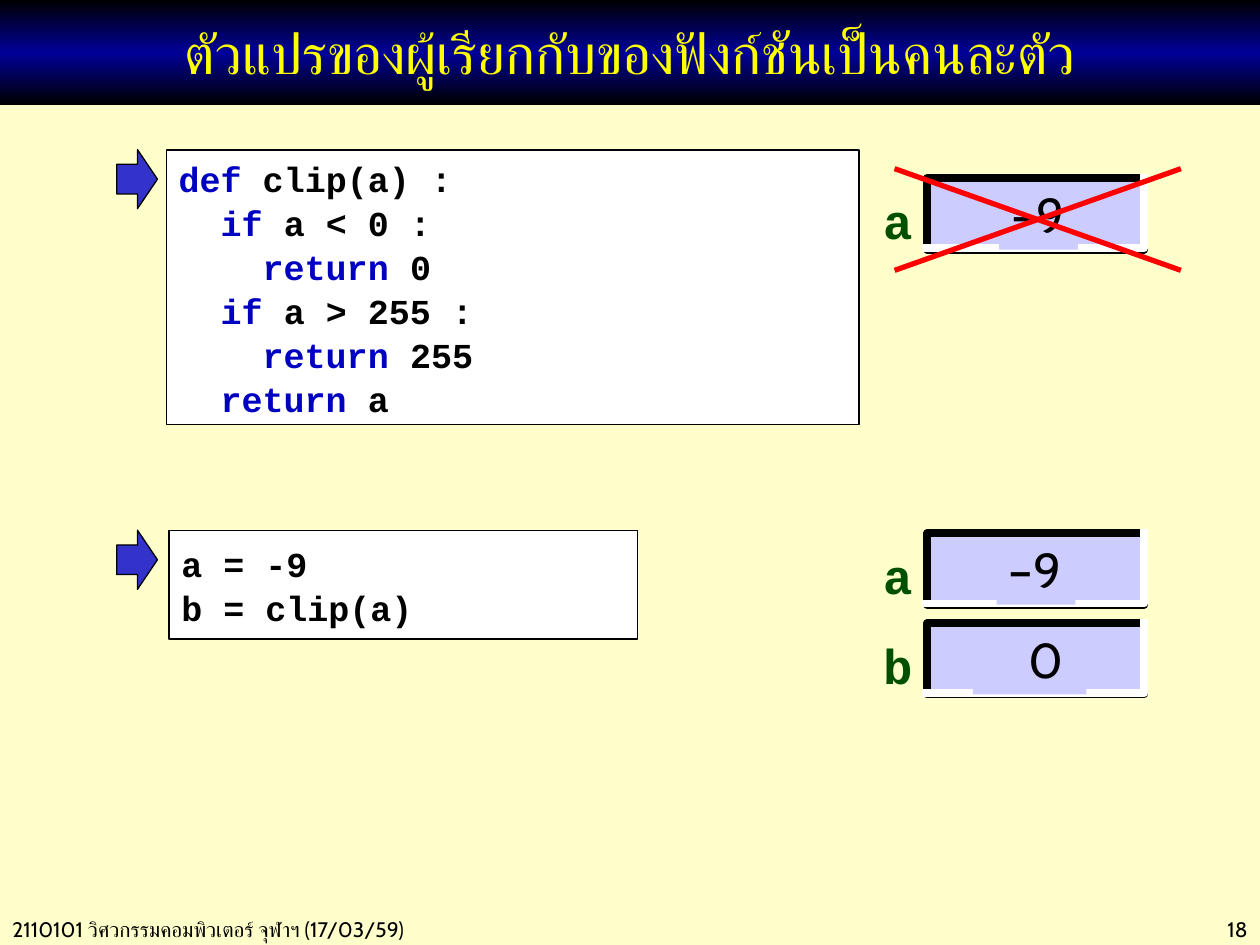
from lxml import etree
from pptx import Presentation
from pptx.dml.color import RGBColor
from pptx.enum import shapes, text
from pptx.oxml.ns import qn
from pptx.util import Pt

TITLE = "ตัวแปรของผู้เรียกกับของฟังก์ชันเป็นคนละตัว"
FOOTER = "2110101 วิศวกรรมคอมพิวเตอร์ จุฬาฯ (17/03/59)"
PAGE_NUMBER = "18"
KEYWORDS = {"def", "if", "return"}
# lines, (left, top, width, height)
CODE_BOXES = [
    (["a = -9", "b = clip(a)"], (96.5, 303.1, 267.8, 62)),
    (["def clip(a) :", "  if a < 0 :", "    return 0", "  if a > 255 :",
      "    return 255", "  return a"], (95, 85.7, 396, 157)),
]
# name, top of the cell, value, (left, width) of the value, its left inset
VARIABLES = [
    ("a", 304.6, "–9", (569.5, 45), 7.2),
    ("b", 355.9, "0", (556, 64.8), 31.5),
    ("a", 101.7, "–9", (571, 45), 7.2),
]
ARROW_TOPS = [303, 85.5]
CROSS = (511.2, 96.4, 674.8, 154.5)  # left, top, right, bottom
CELL_LEFT, CELL_WIDTH, CELL_HEIGHT = 530, 124, 41
BLACK, WHITE, CELL_FILL = "000000", "FFFFFF", "CCCCFF"


def color(value):
    return RGBColor.from_string(value)


def style(shape, fill=None, line=None, width=0.75):
    shape.shadow.inherit = False
    if fill:
        shape.fill.solid()
        shape.fill.fore_color.rgb = color(fill)
    else:
        shape.fill.background()
    if line:
        shape.line.color.rgb = color(line)
        shape.line.width = Pt(width)
    else:
        shape.line.fill.background()


def add_box(slide, box, fill=None, line=None, width=0.75,
            kind=shapes.MSO_SHAPE.RECTANGLE):
    shape = slide.shapes.add_shape(kind, *map(Pt, box))
    style(shape, fill, line, width)
    return shape


def set_font(run, size, name, value, bold=False):
    run.font.size = Pt(size)
    run.font.name = name
    run.font.bold = bold
    run.font.color.rgb = color(value)
    if name == "Cabin":
        etree.SubElement(run.font._element, qn("a:cs"), typeface=name)


def write(shape, words, size, value, name="Cabin", bold=False,
          align=text.PP_ALIGN.LEFT, anchor=text.MSO_ANCHOR.TOP, wrap=True):
    frame = shape.text_frame
    frame.text = words
    frame.word_wrap = wrap
    frame.vertical_anchor = anchor
    paragraph = frame.paragraphs[0]
    paragraph.alignment = align
    set_font(paragraph.runs[0], size, name, value, bold)
    return frame


def add_text(slide, box, words, size, value, **options):
    write(slide.shapes.add_textbox(*map(Pt, box)), words, size, value, **options)


def add_title(slide):
    shape = add_box(slide, (0, 0, 720, 60), BLACK)
    shape.fill.gradient()
    shape.fill.gradient_angle = 90
    stops = shape.fill._fill._gradFill.find(qn("a:gsLst"))
    for stop in list(stops):
        stops.remove(stop)
    for position, value in [(0, BLACK), (50000, "000099"), (100000, BLACK)]:
        stop = etree.SubElement(stops, qn("a:gs"), pos=str(position))
        etree.SubElement(stop, qn("a:srgbClr"), val=value)
    write(shape, TITLE, 32, "FFFF00", align=text.PP_ALIGN.CENTER,
          anchor=text.MSO_ANCHOR.MIDDLE)


def add_code(slide, lines, box):
    frame = add_box(slide, box, WHITE, BLACK).text_frame
    frame.word_wrap = False
    frame.vertical_anchor = text.MSO_ANCHOR.MIDDLE
    for index, line in enumerate(lines):
        paragraph = frame.paragraphs[0] if index == 0 else frame.add_paragraph()
        paragraph.alignment = text.PP_ALIGN.LEFT
        paragraph.line_spacing = 1.05
        keyword = line.split()[0]
        start = line.index(keyword) + len(keyword) if keyword in KEYWORDS else 0
        for part, value in [(line[:start], "0000C0"), (line[start:], BLACK)]:
            if part:
                run = paragraph.add_run()
                run.text = part
                set_font(run, 20, "Courier New", value, True)


def add_variable(slide, name, top, value, span, inset):
    add_box(slide, (CELL_LEFT, top, CELL_WIDTH, CELL_HEIGHT), CELL_FILL, BLACK, 4.5)
    right, bottom = CELL_LEFT + CELL_WIDTH, top + CELL_HEIGHT - 0.7
    builder = slide.shapes.build_freeform(Pt(CELL_LEFT - 3), Pt(bottom))
    builder.add_line_segments([(Pt(right), Pt(bottom)), (Pt(right), Pt(top - 2))],
                              close=False)
    style(builder.convert_to_shape(), None, WHITE, 4.5)
    add_text(slide, (488.2, top + 3.6, 40.3, 41), name, 28, "005000",
             name="Courier New", bold=True, align=text.PP_ALIGN.RIGHT)
    left, width = span
    label = add_box(slide, (left, top + 12.2, width, 28.8), CELL_FILL)
    frame = write(label, value, 28, BLACK, wrap=False)
    frame.margin_left = Pt(inset)
    frame.paragraphs[0].line_spacing = 0.6


def add_line(slide, *ends):
    line = slide.shapes.add_connector(shapes.MSO_CONNECTOR.STRAIGHT, *map(Pt, ends))
    line.line.color.rgb = color("FF0000")
    line.line.width = Pt(3)
    etree.SubElement(line._element.spPr, qn("a:effectLst"))


def main():
    presentation = Presentation()
    presentation.slide_width, presentation.slide_height = Pt(720), Pt(540)
    slide = presentation.slides.add_slide(presentation.slide_layouts[6])
    slide.background.fill.solid()
    slide.background.fill.fore_color.rgb = color("FFFFCC")

    add_text(slide, (0, 520, 281, 21.6), FOOTER, 12, BLACK)
    add_text(slide, (620.6, 520, 99.4, 21.6), PAGE_NUMBER, 12, BLACK,
             align=text.PP_ALIGN.RIGHT)
    add_title(slide)
    for lines, box in CODE_BOXES:
        add_code(slide, lines, box)
    for variable in VARIABLES:
        add_variable(slide, *variable)
    for top in ARROW_TOPS:
        arrow = add_box(slide, (66.7, top, 23.3, 33.8), "3333CC", BLACK,
                        kind=shapes.MSO_SHAPE.RIGHT_ARROW)
        arrow.adjustments[0], arrow.adjustments[1] = 0.5, 0.49
    left, top, right, bottom = CROSS
    add_line(slide, left, top, right, bottom)
    add_line(slide, right, top, left, bottom)
    presentation.save("out.pptx")


if __name__ == "__main__":
    main()
